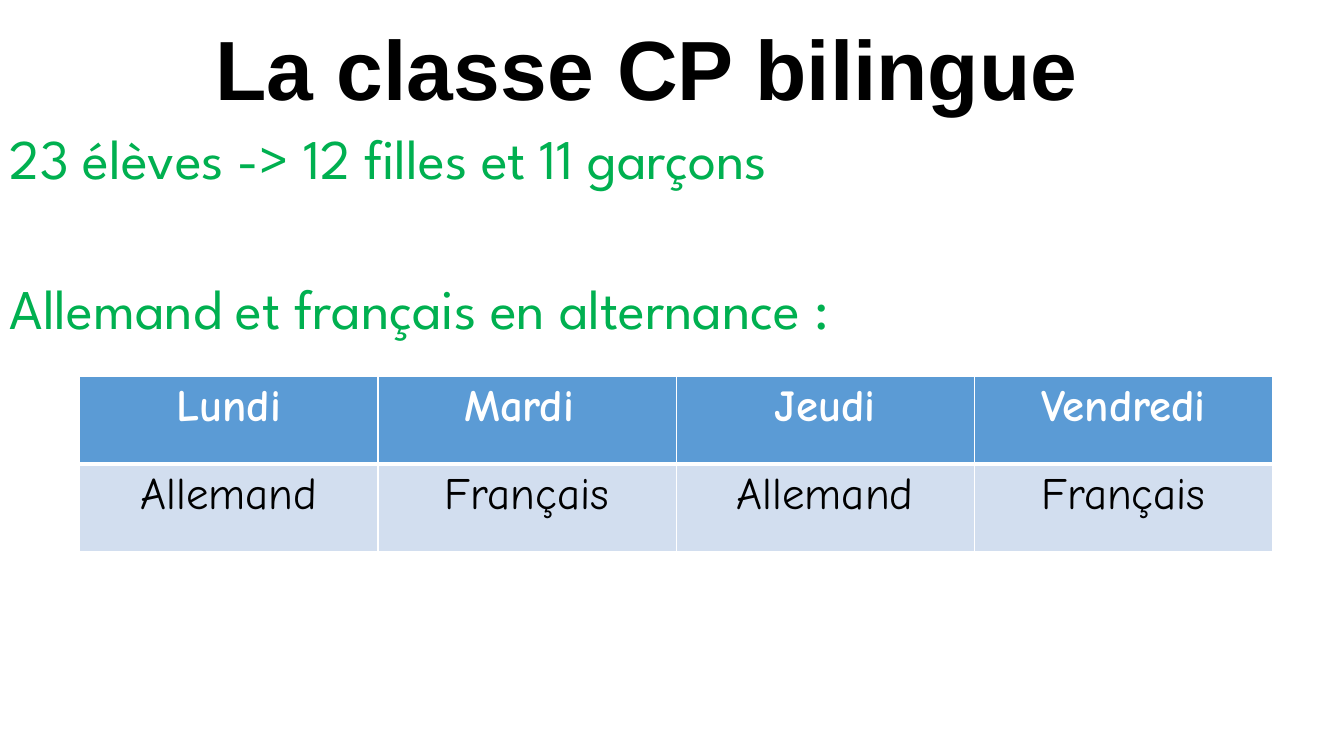
"""Build the slide that presents the bilingual CP class and its weekly language timetable."""
from lxml import etree
from pptx import Presentation
from pptx.dml.color import RGBColor
from pptx.enum.text import MSO_ANCHOR, PP_ALIGN
from pptx.oxml.ns import qn
from pptx.util import Pt

CENTER = PP_ALIGN.CENTER
MIDDLE = MSO_ANCHOR.MIDDLE
WHITE, BLACK, GREEN = "FFFFFF", "000000", "00B050"


def style(run, font, size, color, bold=False):
    """Set the font of one run."""
    run.font.name = font
    run.font.size = Pt(size)
    run.font.bold = bold
    run.font.color.rgb = RGBColor.from_string(color)


def white_line(parent, tag, width, index):
    """Insert a solid white line of the given width in points."""
    line = etree.Element(qn(tag), w=str(Pt(width)))
    fill = etree.SubElement(line, qn("a:solidFill"))
    etree.SubElement(fill, qn("a:srgbClr"), val=WHITE)
    parent.insert(index, line)


prs = Presentation()
prs.slide_width, prs.slide_height = Pt(960), Pt(540)
slide = prs.slides.add_slide(prs.slide_layouts[6])

title = slide.shapes.add_textbox(Pt(2), Pt(0), Pt(920), Pt(104.4)).text_frame
title.word_wrap = True
title.vertical_anchor = MIDDLE
title.text = "La classe CP bilingue"
heading = title.paragraphs[0]
heading.alignment = CENTER
heading.line_spacing = 0.9
style(heading.runs[0], "Arial", 60, BLACK, True)
white_line(heading.runs[0].font._element, "a:ln", 0.75, 0)

facts = slide.shapes.add_textbox(Pt(0), Pt(98.6), Pt(942), Pt(365)).text_frame
facts.word_wrap = True
facts.text = "23 élèves -> 12 filles et 11 garçons\nAllemand et français en alternance :"
for fact, space_before in zip(facts.paragraphs, (10, 73)):
    fact.line_spacing = Pt(34)
    fact.space_before = Pt(space_before)
    style(fact.runs[0], "League Spartan", 40, GREEN)

timetable = [
    ("Lundi", "Mardi ", "Jeudi", "Vendredi"),
    ("Allemand", "Français", "Allemand", "Français"),
]
row_looks = [
    ("5B9BD5", WHITE, True, {"a:lnL": 1, "a:lnR": 1, "a:lnT": 1, "a:lnB": 3}),
    ("D2DEEF", BLACK, False, {"a:lnL": 1, "a:lnR": 1, "a:lnT": 3, "a:lnB": 1}),
]
table = slide.shapes.add_table(2, 4, Pt(57), Pt(268.6), Pt(852), Pt(125.2)).table
for r, (words, look) in enumerate(zip(timetable, row_looks)):
    fill, color, bold, borders = look
    for c, word in enumerate(words):
        cell = table.cell(r, c)
        cell.text = word
        cell.fill.solid()
        cell.fill.fore_color.rgb = RGBColor.from_string(fill)
        entry = cell.text_frame.paragraphs[0]
        entry.alignment = CENTER
        style(entry.runs[0], "Comic Neue", 32, color, bold)
        for index, (side, width) in enumerate(borders.items()):
            white_line(cell._tc.get_or_add_tcPr(), side, width, index)

prs.save("out.pptx")
